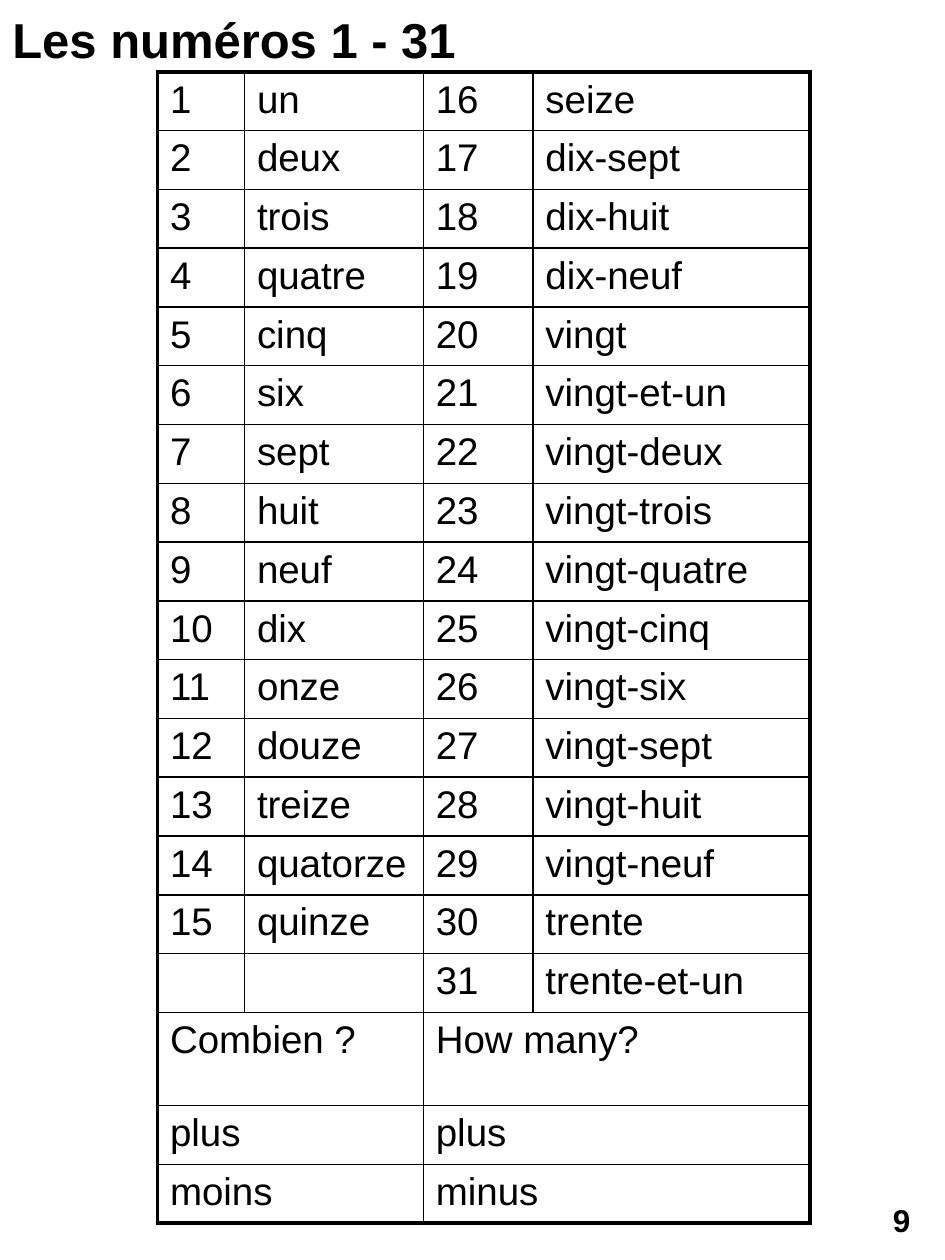
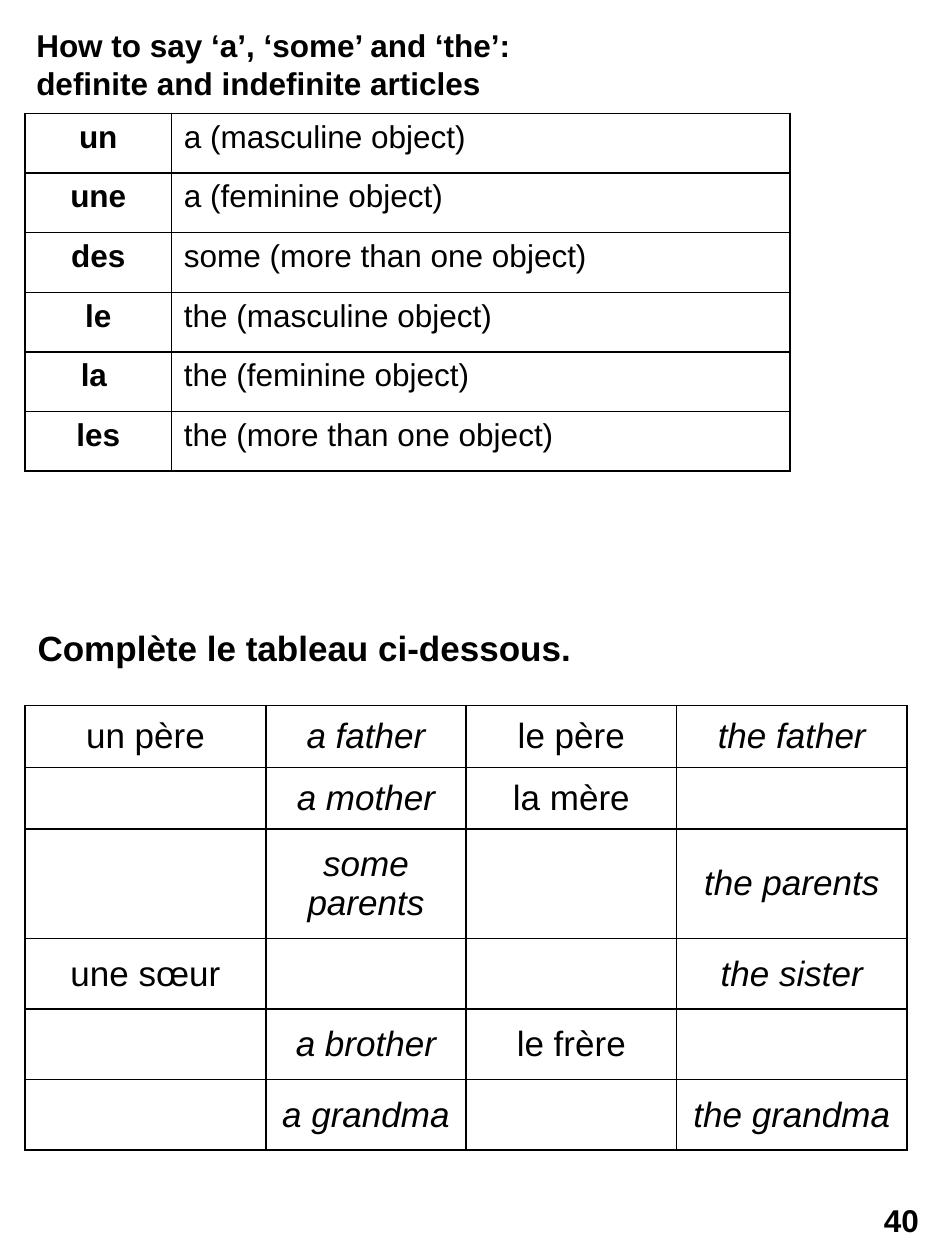
from itertools import zip_longest

from lxml import etree
from pptx import Presentation
from pptx.dml.color import RGBColor
from pptx.enum import shapes, text
from pptx.oxml import ns
from pptx.util import Inches, Pt

BLACK = RGBColor(0x00, 0x00, 0x00)
FONT = "Arial"
THIN, THICK = 1, 2.25
CENTER, MIDDLE = text.PP_ALIGN.CENTER, text.MSO_ANCHOR.MIDDLE

NUMBERS = (
    "un deux trois quatre cinq six sept huit neuf dix onze douze treize quatorze quinze "
    "seize dix-sept dix-huit dix-neuf vingt vingt-et-un vingt-deux vingt-trois "
    "vingt-quatre vingt-cinq vingt-six vingt-sept vingt-huit vingt-neuf trente trente-et-un"
).split()
SUMS = [("Combien ?", "How many?"), ("plus", "plus"), ("moins", "minus")]

ARTICLES = [
    ("un", "a (masculine object)"),
    ("une", "a (feminine object)"),
    ("des", "some (more than one object)"),
    ("le", "the (masculine object)"),
    ("la ", "the (feminine object)"),
    ("les", "the (more than one object)"),
]
FAMILY = [
    ("un père", "a father", "le père", "the father"),
    ("", "a mother", "la mère", ""),
    ("", "some parents", "", "the parents"),
    ("une sœur", "", "", "the sister"),
    ("", "a brother", "le frère", ""),
    ("", "a grandma", "", "the grandma"),
]


def write(frame, words, size, bold=False, italic=False, align=None, before=0):
    """Fill a text frame; before is the space above in percent of a line."""
    paragraph = frame.paragraphs[0]
    paragraph.text = words
    if align is not None:
        paragraph.alignment = align
    if before:
        spacing = etree.SubElement(paragraph._p.get_or_add_pPr(), ns.qn("a:spcBef"))
        etree.SubElement(spacing, ns.qn("a:spcPct")).set("val", str(before * 1000))
    for run in paragraph.runs:
        run.font.name, run.font.size = FONT, Pt(size)
        run.font.bold, run.font.italic = bold, italic
        run.font.color.rgb = BLACK


def add_heading(slide, box, words, size, before=0):
    heading = slide.shapes.add_textbox(*map(Inches, box))
    heading.text_frame.word_wrap = True
    write(heading.text_frame, words, size, bold=True, before=before)


def add_page_number(slide, number):
    badge = slide.shapes.add_shape(
        shapes.MSO_SHAPE.ROUNDED_RECTANGLE,
        Inches(6.88), Inches(9.45), Inches(0.55), Inches(0.47))
    badge.shadow.inherit = False
    badge.fill.background()
    badge.line.fill.background()
    badge.text_frame.vertical_anchor = MIDDLE
    write(badge.text_frame, str(number), 18, bold=True, align=CENTER)


def set_borders(cell, widths):
    """Draw the left, right, top and bottom border in the given point widths."""
    properties = cell._tc.get_or_add_tcPr()
    for place, (side, width) in enumerate(zip("LRTB", widths)):
        line = etree.Element(ns.qn(f"a:ln{side}"), w=str(Pt(width)))
        fill = etree.SubElement(line, ns.qn("a:solidFill"))
        etree.SubElement(fill, ns.qn("a:srgbClr")).set("val", str(BLACK))
        properties.insert(place, line)


def add_grid(slide, left, top, columns, heights, outer=THIN):
    """Add an unfilled table with thin inner and chosen outer borders."""
    table = slide.shapes.add_table(
        len(heights), len(columns), Inches(left), Inches(top),
        Inches(sum(columns)), Inches(sum(heights))).table
    table.first_row = table.horz_banding = False
    for column, width in zip(table.columns, columns):
        column.width = Inches(width)
    for row, height in zip(table.rows, heights):
        row.height = Inches(height)
    last_row, last_column = len(heights) - 1, len(columns) - 1
    for r in range(len(heights)):
        for c in range(len(columns)):
            cell = table.cell(r, c)
            cell.fill.background()
            edges = (c == 0, c == last_column, r == 0, r == last_row)
            set_borders(cell, [outer if edge else THIN for edge in edges])
    return table


def fill_numbers_table(slide, left, top, height):
    # Two number lists side by side, then the merged rows for sums
    counted = list(enumerate(NUMBERS, 1))
    pairs = list(zip_longest(counted[:15], counted[15:], fillvalue=("", "")))
    question = 0.74
    regular = (height - question) / (len(pairs) + len(SUMS) - 1)
    heights = [regular] * len(pairs) + [question] + [regular] * (len(SUMS) - 1)
    table = add_grid(slide, left, top, [0.69, 1.42, 0.87, 2.2], heights, THICK)

    for r, (low, high) in enumerate(pairs):
        for c, words in enumerate(low + high):
            if words:
                write(table.cell(r, c).text_frame, str(words), 22, before=20)
    for r, phrases in enumerate(SUMS, len(pairs)):
        for c, words in zip((0, 2), phrases):
            cell = table.cell(r, c)
            cell.merge(table.cell(r, c + 1))
            write(cell.text_frame, words, 22, before=20)
            if c == 2:
                bottom = THICK if r == len(heights) - 1 else THIN
                for line in list(cell._tc.tcPr)[:4]:
                    cell._tc.tcPr.remove(line)
                set_borders(cell, (THIN, THICK, THIN, bottom))


def fill_articles_table(slide, left, top, height):
    heights = [height / len(ARTICLES)] * len(ARTICLES)
    table = add_grid(slide, left, top, [1.16, 4.91], heights)
    for r, (article, meaning) in enumerate(ARTICLES):
        write(table.cell(r, 0).text_frame, article, 18, bold=True, align=CENTER)
        write(table.cell(r, 1).text_frame, meaning, 18)


def fill_family_table(slide, left, top):
    # French and English columns alternate; English is italic
    table = add_grid(slide, left, top, [1.91, 1.59, 1.67, 1.83],
                     [0.49, 0.49, 0.87, 0.56, 0.56, 0.56])
    for r, phrases in enumerate(FAMILY):
        for c, words in enumerate(phrases):
            cell = table.cell(r, c)
            cell.vertical_anchor = MIDDLE
            if words:
                write(cell.text_frame, words, 20, italic=c % 2 == 1, align=CENTER)


def build_numbers_slide(slide):
    fill_numbers_table(slide, 1.25, 0.57, 9.14)
    add_heading(slide, (0, 0.03, 7.42, 0.57), "Les numéros 1 - 31", 28, before=50)
    add_page_number(slide, 9)


def build_articles_slide(slide):
    fill_articles_table(slide, 0.2, 0.9, 2.84)
    add_heading(slide, (0.19, 0.16, 7, 0.71),
                "How to say ‘a’, ‘some’ and ‘the’:\vdefinite and indefinite articles",
                18, before=50)
    fill_family_table(slide, 0.2, 5.6)
    add_heading(slide, (0.2, 4.92, 6.54, 0.44), "Complète le tableau ci-dessous.", 20)
    add_page_number(slide, 40)


def main():
    booklet = Presentation()
    booklet.slide_width, booklet.slide_height = Inches(7.5), Inches(10)
    for build in (build_numbers_slide, build_articles_slide):
        build(booklet.slides.add_slide(booklet.slide_layouts[6]))
    booklet.save("out.pptx")


if __name__ == "__main__":
    main()
